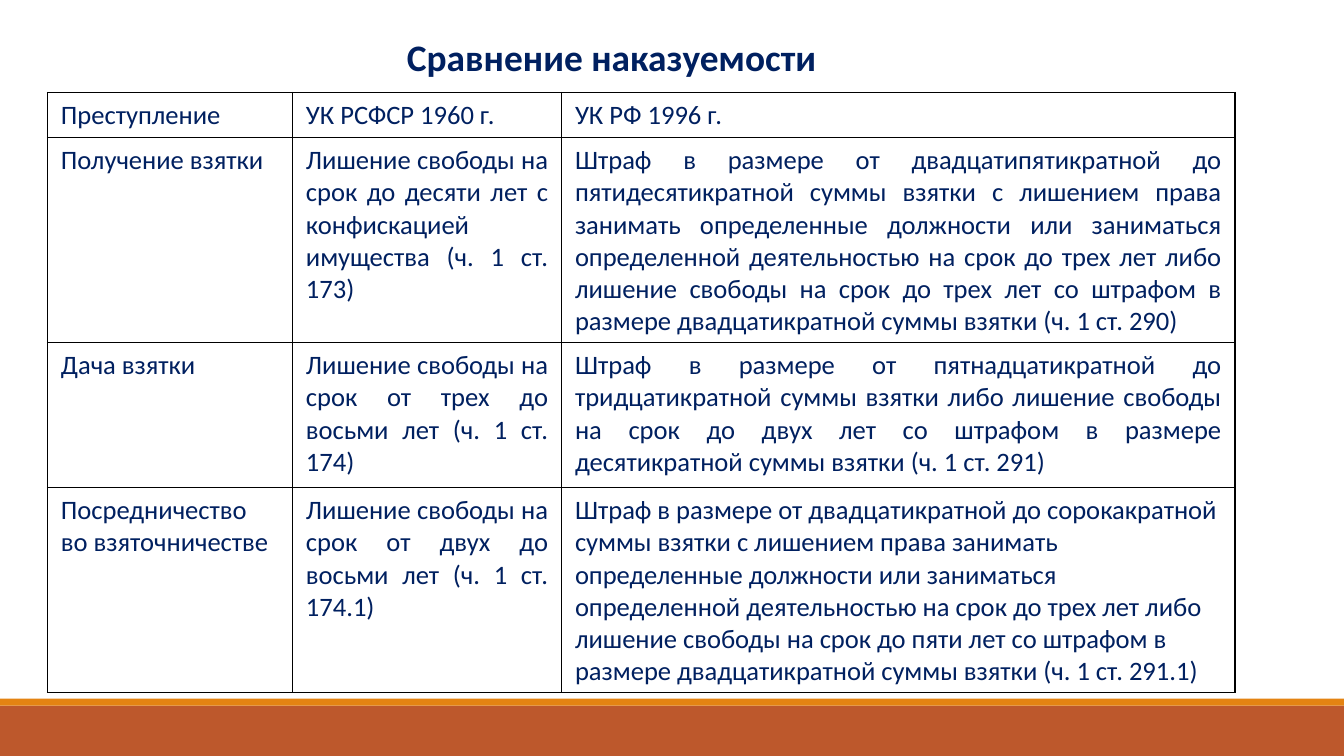
"""Build a slide comparing bribery penalties under two criminal codes."""
from lxml import etree
from pptx import Presentation
from pptx import util as u
from pptx.dml.color import RGBColor
from pptx.enum import shapes, text
from pptx.oxml.ns import qn

TITLE = "Сравнение наказуемости"
ROWS = [
    ("Преступление", "УК РСФСР 1960 г.", "УК РФ 1996 г."),
    ("Получение взятки",
     "Лишение свободы на срок до десяти лет с конфискацией имущества (ч. 1 ст. 173)",
     "Штраф в размере от двадцатипятикратной до пятидесятикратной суммы взятки "
     "с лишением права занимать определенные должности или заниматься "
     "определенной деятельностью на срок до трех лет либо лишение свободы на срок "
     "до трех лет со штрафом в размере двадцатикратной суммы взятки (ч. 1 ст. 290)"),
    ("Дача взятки",
     "Лишение свободы на срок от трех до восьми лет (ч. 1 ст. 174)",
     "Штраф в размере от пятнадцатикратной до тридцатикратной суммы взятки либо "
     "лишение свободы на срок до двух лет со штрафом в размере десятикратной "
     "суммы взятки (ч. 1 ст. 291)"),
    ("Посредничество во взяточничестве",
     "Лишение свободы на срок от двух до восьми лет (ч. 1 ст. 174.1)",
     "Штраф в размере от двадцатикратной до сорокакратной суммы взятки с лишением "
     "права занимать определенные должности или заниматься определенной "
     "деятельностью на срок до трех лет либо лишение свободы на срок до пяти лет "
     "со штрафом в размере двадцатикратной суммы взятки (ч. 1 ст. 291.1)"),
]
WIDE, HIGH = 960, 540
COLS = (175, 192.2, 481)
TALL = (31.9, 146.4, 103.6, 146.4)
BANDS = [(504, 36, "BD582C"), (499, 5, "E48312")]
INK, LINE = "002060", "000000"
PAD = {"margin_left": u.Pt(9.6), "margin_right": u.Pt(9.6),
       "margin_top": u.Pt(4.8), "margin_bottom": u.Pt(4.8)}
HEAD = {"name": "Calibri", "size": u.Pt(26.7), "bold": True}
BODY = {"name": "Calibri", "size": u.Pt(19), "bold": False}


def shade(item, code):
    """Give a colour format or a fill its hex colour."""
    item.rgb = RGBColor.from_string(code)


def apply(item, look):
    """Set each named attribute on the item."""
    for name, value in look.items():
        setattr(item, name, value)


def write(frame, words, look, align):
    """Put one styled paragraph in a text frame."""
    para = frame.paragraphs[0]
    para.alignment = align
    run = para.add_run()
    run.text = words
    apply(run.font, look)
    shade(run.font.color, INK)


def edge(cell):
    """Draw a thin line on all four sides of a cell."""
    props = cell._tc.get_or_add_tcPr()
    for spot, side in enumerate(("lnL", "lnR", "lnT", "lnB")):
        line = etree.Element(qn("a:" + side), w=str(u.Pt(1)))
        fill = etree.SubElement(line, qn("a:solidFill"))
        etree.SubElement(fill, qn("a:srgbClr"), val=LINE)
        props.insert(spot, line)


def main():
    """Lay out the bands, title and table, then save."""
    deck = Presentation()
    apply(deck, {"slide_width": u.Pt(WIDE), "slide_height": u.Pt(HIGH)})
    slide = deck.slides.add_slide(deck.slide_layouts[6])

    for top, tall, code in BANDS:
        band = slide.shapes.add_shape(shapes.MSO_SHAPE.RECTANGLE, 0, u.Pt(top),
                                      u.Pt(WIDE), u.Pt(tall))
        band.shadow.inherit = False
        band.fill.solid()
        shade(band.fill.fore_color, code)
        band.line.fill.background()

    box = slide.shapes.add_textbox(u.Pt(283.5), u.Pt(21), u.Pt(309), u.Pt(39.6))
    apply(box.text_frame, {"word_wrap": False,
                           "auto_size": text.MSO_AUTO_SIZE.SHAPE_TO_FIT_TEXT})
    write(box.text_frame, TITLE, HEAD, text.PP_ALIGN.LEFT)

    grid = slide.shapes.add_table(len(ROWS), len(COLS), u.Pt(34), u.Pt(66),
                                  u.Pt(sum(COLS)), u.Pt(sum(TALL))).table
    apply(grid, {"first_row": False, "horz_banding": False})
    for col, wide in zip(grid.columns, COLS):
        col.width = u.Pt(wide)
    for row, tall, words in zip(grid.rows, TALL, ROWS):
        row.height = u.Pt(tall)
        for cell, word in zip(row.cells, words):
            apply(cell, PAD)
            cell.fill.background()
            edge(cell)
            last = word == ROWS[-1][-1]
            align = text.PP_ALIGN.LEFT if last else text.PP_ALIGN.JUSTIFY
            write(cell.text_frame, word, BODY, align)

    deck.save("out.pptx")


if __name__ == "__main__":
    main()
